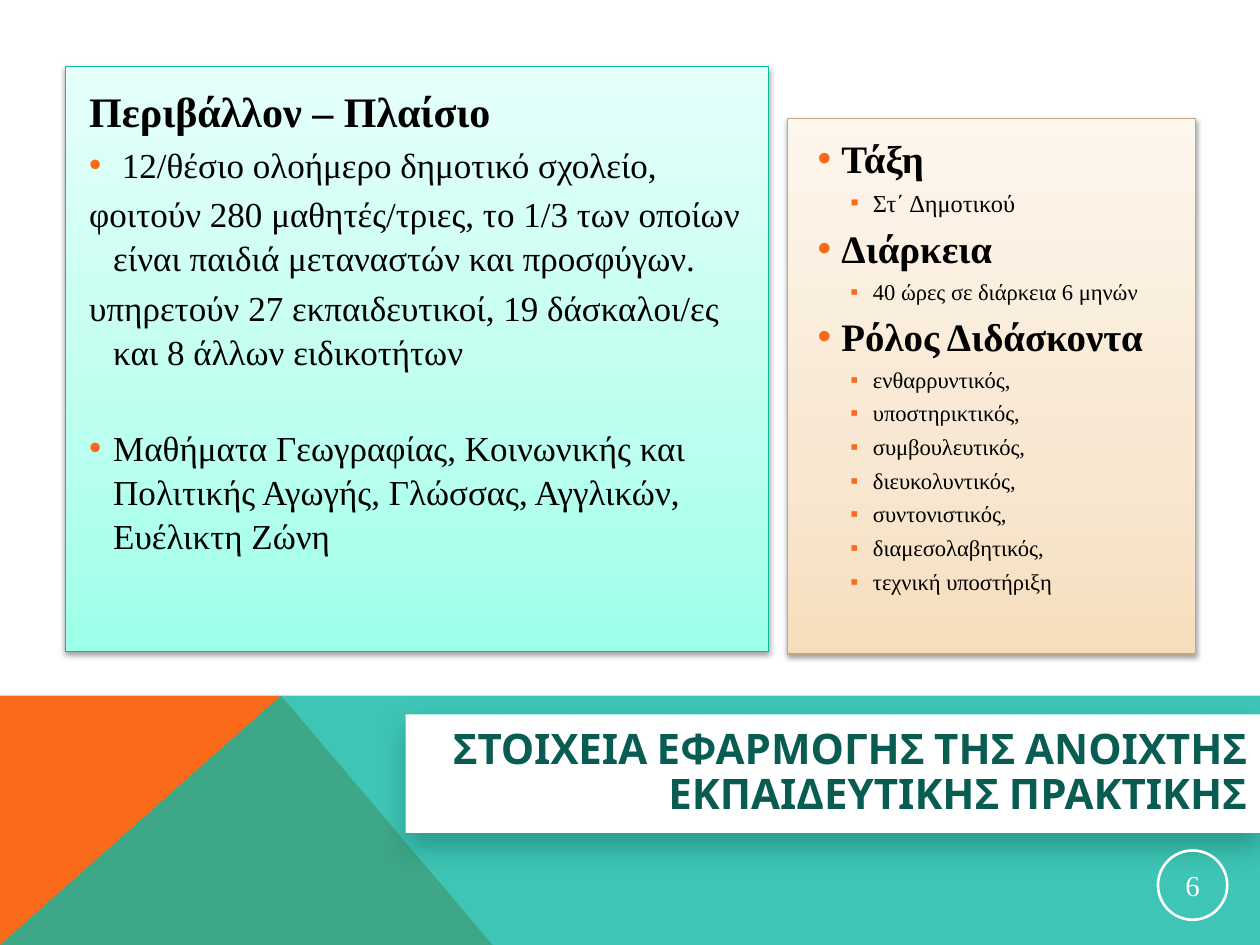
"""Build the slide on how the open educational practice was applied."""
from dataclasses import dataclass

from lxml.etree import SubElement
from pptx import Presentation
from pptx.dml.color import RGBColor
from pptx.enum.shapes import MSO_SHAPE
from pptx.enum.text import MSO_ANCHOR, PP_ALIGN
from pptx.oxml.ns import qn
from pptx.shapes.autoshape import Shape
from pptx.slide import Slide
from pptx.text.text import _Paragraph
from pptx.util import Pt

PX = 9144


@dataclass(frozen=True)
class Theme:
    serif: str = "Times New Roman"
    sans: str = "Cabin"
    bullet_font: str = "Arial"
    orange: str = "F96A1B"
    teal: str = "10B7A3"
    dark_teal: str = "085C52"
    black: str = "000000"
    white: str = "FFFFFF"
    mint: tuple[str, ...] = ("9DFFEA", "BAFFEF", "E5FFF9")
    mint_edge: str = "0CB7A3"
    sand: tuple[str, ...] = ("F6DEBD", "F8E7D1", "FDF6EC")
    sand_edge: str = "BFA989"
    stops: tuple[int, ...] = (0, 35, 100)
    heading: float = 24
    body: float = 20
    topic: float = 22.2
    grade: float = 13.9
    detail: float = 12.9
    number: float = 16.5


THEME = Theme()


@dataclass(frozen=True)
class Box:
    left: int
    top: int
    width: int
    height: int

    def emu(self) -> tuple[int, ...]:
        return tuple(side * PX for side in (self.left, self.top, self.width, self.height))


@dataclass(frozen=True)
class Shadow:
    color: str
    alpha: int
    blur: float
    distance: float


@dataclass(frozen=True)
class Panel:
    box: Box
    colors: tuple[str, ...]
    edge: str


@dataclass(frozen=True)
class Item:
    text: str
    size: float
    bold: bool = False
    bullet: str = ""
    margin: int = 19
    hanging: int = 19
    before: float = 3


def topic(text: str) -> Item:
    """Describe a bold first-level entry."""
    return Item(text, THEME.topic, True, "•")


def detail(text: str, size: float = THEME.detail) -> Item:
    """Describe a second-level entry."""
    return Item(text, size, False, "▪", 44, 18)


PANEL_SHADOW = Shadow(THEME.black, 38, 3.1, 1.6)
TITLE_SHADOW = Shadow(THEME.dark_teal, 40, 16, 8)

PANELS = (
    Panel(Box(625, 94, 324, 425), THEME.sand, THEME.sand_edge),
    Panel(Box(52, 53, 558, 464), THEME.mint, THEME.mint_edge),
)

CONTEXT = (
    Item("Περιβάλλον – Πλαίσιο", THEME.heading, True, margin=38, hanging=38),
    Item(" 12/θέσιο ολοήμερο δημοτικό σχολείο,", THEME.body, bullet="•"),
    Item("φοιτούν 280 μαθητές/τριες, το 1/3 των οποίων είναι παιδιά μεταναστών "
         "και προσφύγων.", THEME.body),
    Item("υπηρετούν 27 εκπαιδευτικοί, 19 δάσκαλοι/ες και 8 άλλων ειδικοτήτων", THEME.body),
    Item("Μαθήματα Γεωγραφίας, Κοινωνικής και Πολιτικής Αγωγής, Γλώσσας, Αγγλικών, "
         "Ευέλικτη Ζώνη", THEME.body, bullet="•", before=30),
)

ROLES = ("ενθαρρυντικός,", "υποστηρικτικός,", "συμβουλευτικός,", "διευκολυντικός,",
         "συντονιστικός,", "διαμεσολαβητικός,", "τεχνική υποστήριξη")

OUTLINE = (
    topic("Τάξη"),
    detail("Στ΄ Δημοτικού", THEME.grade),
    topic("Διάρκεια"),
    detail("40 ώρες σε διάρκεια 6 μηνών"),
    topic("Ρόλος Διδάσκοντα"),
    *map(detail, ROLES),
)


def paint(shape: Shape, color: str, alpha: int = 100) -> None:
    """Fill a shape with one colour, optionally translucent."""
    shape.fill.solid()
    shape.fill.fore_color.rgb = RGBColor.from_string(color)
    if alpha < 100:
        tint = shape._element.spPr.find(f".//{qn('a:srgbClr')}")
        SubElement(tint, qn("a:alpha"), val=str(alpha * 1000))


def cast_shadow(shape: Shape, shadow: Shadow) -> None:
    """Give a shape a downward outer shadow."""
    shape.shadow.inherit = False
    effects = shape._element.spPr.find(qn("a:effectLst"))
    outer = SubElement(effects, qn("a:outerShdw"), blurRad=str(Pt(shadow.blur)),
                       dist=str(Pt(shadow.distance)), dir="5400000", rotWithShape="0")
    tint = SubElement(outer, qn("a:srgbClr"), val=shadow.color)
    SubElement(tint, qn("a:alpha"), val=str(shadow.alpha * 1000))


def style(paragraph: _Paragraph, family: str, size: float, color: str, bold: bool) -> None:
    """Set the font of a whole paragraph."""
    font = paragraph.font
    font.name, font.size, font.bold = family, Pt(size), bold
    font.color.rgb = RGBColor.from_string(color)


def add_facet(slide: Slide, corners: tuple[tuple[int, int], ...], color: str, alpha: int) -> None:
    """Draw one polygon of the bottom band."""
    builder = slide.shapes.build_freeform(*corners[0], scale=PX)
    builder.add_line_segments(corners[1:], close=True)
    facet = builder.convert_to_shape()
    paint(facet, color, alpha)
    facet.line.fill.background()
    facet.shadow.inherit = False


def add_panel(slide: Slide, panel: Panel) -> None:
    """Draw a gradient panel with a thin edge."""
    card = slide.shapes.add_shape(MSO_SHAPE.RECTANGLE, *panel.box.emu())
    card.fill.gradient()
    card.fill.gradient_angle = 90
    stops = card._element.spPr.find(f".//{qn('a:gsLst')}")
    stops.clear()
    for position, color in zip(THEME.stops, panel.colors):
        stop = SubElement(stops, qn("a:gs"), pos=str(position * 1000))
        SubElement(stop, qn("a:srgbClr"), val=color)
    card.line.color.rgb = RGBColor.from_string(panel.edge)
    card.line.width = Pt(0.75)
    cast_shadow(card, PANEL_SHADOW)


def add_items(slide: Slide, box: Box, items: tuple[Item, ...]) -> None:
    """Write a list of entries in a text box."""
    frame = slide.shapes.add_textbox(*box.emu()).text_frame
    frame.word_wrap = True
    for index, item in enumerate(items):
        paragraph = frame.add_paragraph() if index else frame.paragraphs[0]
        paragraph.text = item.text
        paragraph.line_spacing = 1.05
        if index:
            paragraph.space_before = Pt(item.before)
        properties = paragraph._p.get_or_add_pPr()
        properties.set("marL", str(item.margin * PX))
        properties.set("indent", str(-item.hanging * PX))
        if item.bullet:
            tint = SubElement(properties, qn("a:buClr"))
            SubElement(tint, qn("a:srgbClr"), val=THEME.orange)
            SubElement(properties, qn("a:buFont"), typeface=THEME.bullet_font)
            SubElement(properties, qn("a:buChar"), char=item.bullet)
        else:
            SubElement(properties, qn("a:buNone"))
        style(paragraph, THEME.serif, item.size, THEME.black, item.bold)


def add_title(slide: Slide, box: Box, text: str) -> None:
    """Draw the white title bar."""
    bar = slide.shapes.add_shape(MSO_SHAPE.RECTANGLE, *box.emu())
    paint(bar, THEME.white)
    bar.line.fill.background()
    cast_shadow(bar, TITLE_SHADOW)
    bar.text_frame.vertical_anchor = MSO_ANCHOR.MIDDLE
    heading = bar.text_frame.paragraphs[0]
    heading.text, heading.alignment, heading.line_spacing = text, PP_ALIGN.RIGHT, 0.9
    style(heading, THEME.sans, THEME.heading, THEME.dark_teal, True)


def add_page_number(slide: Slide, box: Box, number: str) -> None:
    """Draw the ringed page number."""
    ring = slide.shapes.add_shape(MSO_SHAPE.OVAL, *box.emu())
    ring.fill.background()
    ring.line.color.rgb = RGBColor.from_string(THEME.white)
    ring.line.width = Pt(1.5)
    ring.shadow.inherit = False
    frame = ring.text_frame
    frame.margin_left = frame.margin_right = frame.margin_top = frame.margin_bottom = PX
    frame.vertical_anchor = MSO_ANCHOR.MIDDLE
    label = frame.paragraphs[0]
    label.text, label.alignment = number, PP_ALIGN.CENTER
    style(label, THEME.serif, THEME.number, THEME.white, False)


def main() -> None:
    """Assemble and save the slide."""
    deck = Presentation()
    deck.slide_width, deck.slide_height = 1000 * PX, 750 * PX
    slide = deck.slides.add_slide(deck.slide_layouts[6])
    add_facet(slide, ((0, 750), (0, 552), (223, 552), (391, 750)), THEME.orange, 100)
    add_facet(slide, ((0, 750), (223, 552), (1000, 552), (1000, 750)), THEME.teal, 80)
    for panel in PANELS:
        add_panel(slide, panel)
    add_title(slide, Box(322, 567, 678, 94),
              "ΣΤΟΙΧΕΙΑ ΕΦΑΡΜΟΓΗΣ ΤΗΣ ΑΝΟΙΧΤΗΣ ΕΚΠΑΙΔΕΥΤΙΚΗΣ ΠΡΑΚΤΙΚΗΣ")
    add_items(slide, Box(61, 61, 542, 452), CONTEXT)
    add_items(slide, Box(639, 100, 303, 406), OUTLINE)
    add_page_number(slide, Box(919, 675, 55, 55), "6")
    deck.save("out.pptx")


if __name__ == "__main__":
    main()
